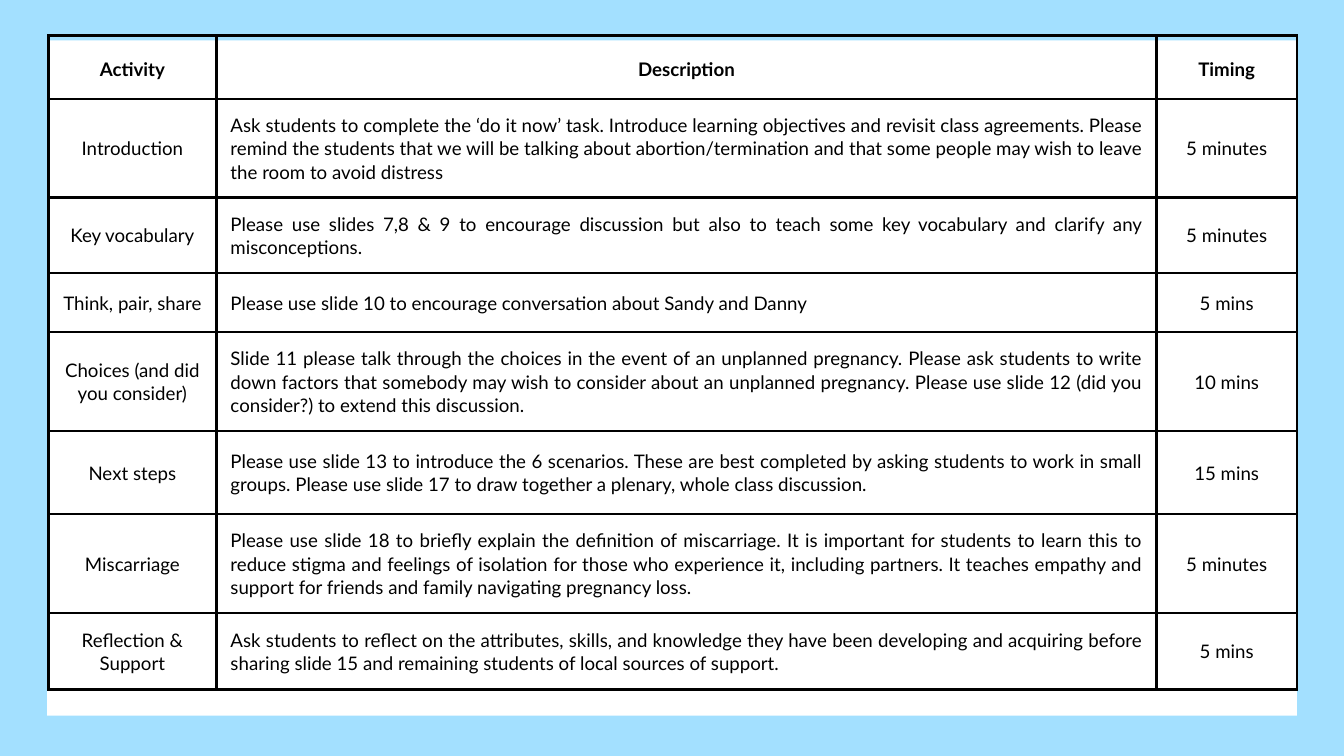
import pptx
import pptx.util
import pptx.dml.color
import pptx.enum.shapes
import pptx.enum.text
import pptx.oxml

Pt = pptx.util.Pt
RGB = pptx.dml.color.RGBColor.from_string
ALIGN = pptx.enum.text.PP_ALIGN

THEME = {
    "sky": RGB("A3E0FF"),
    "paper": RGB("FFFFFF"),
    "ink": "000000",
    "font": "Lato",
    "size": Pt(20),
    "header_spacing": Pt(28),
    "body_spacing": Pt(25.2),
    "border": Pt(3),
}

plan = [
    ("Activity", "Description", "Timing"),
    ("Introduction",
     "Ask students to complete the ‘do it now’ task. Introduce learning objectives and revisit class "
     "agreements. Please remind the students that we will be talking about abortion/termination and "
     "that some people may wish to leave the room to avoid distress",
     "5 minutes"),
    ("Key vocabulary",
     "Please use slides 7,8 & 9 to encourage discussion but also to teach some key vocabulary and "
     "clarify any misconceptions.",
     "5 minutes"),
    ("Think, pair, share",
     "Please use slide 10 to encourage conversation about Sandy and Danny",
     "5 mins"),
    ("Choices (and did you consider)",
     "Slide 11 please talk through the choices in the event of an unplanned pregnancy. Please ask "
     "students to write down factors that somebody may wish to consider about an unplanned pregnancy. "
     "Please use slide 12 (did you consider?) to extend this discussion.",
     "10 mins"),
    ("Next steps",
     "Please use slide 13 to introduce the 6 scenarios. These are best completed by asking students to "
     "work in small groups. Please use slide 17 to draw together a plenary, whole class discussion.",
     "15 mins"),
    ("Miscarriage",
     "Please use slide 18 to briefly explain the definition of miscarriage. It is important for "
     "students to learn this to reduce stigma and feelings of isolation for those who experience it, "
     "including partners. It teaches empathy and support for friends and family navigating pregnancy "
     "loss.",
     "5 minutes"),
    ("Reflection & Support",
     "Ask students to reflect on the attributes, skills, and knowledge they have been developing and "
     "acquiring before sharing slide 15 and remaining students of local sources of support.",
     "5 mins"),
]
column_spans = [25, 139.9, 20.9]
row_spans = [9.4, 8.8, 8.8, 8.8, 11.4, 12.4, 12.4, 11.4]

deck = pptx.Presentation()
deck.slide_width = pptx.util.Inches(20)
deck.slide_height = pptx.util.Inches(11.25)
column = deck.slide_width / 200
row = deck.slide_height / 112.5


def grid(left, top, width, height):
    return [int(left * column), int(top * row), int(width * column), int(height * row)]


def add_borders(cell):
    properties = cell._tc.get_or_add_tcPr()
    for place, side in enumerate(("lnL", "lnR", "lnT", "lnB")):
        properties.insert(place, pptx.oxml.parse_xml(
            f'<a:{side} xmlns:a="http://schemas.openxmlformats.org/drawingml/2006/main" '
            f'w="{THEME["border"]}"><a:solidFill><a:srgbClr val="{THEME["ink"]}"/></a:solidFill>'
            f'<a:prstDash val="solid"/></a:{side}>'))


slide = deck.slides.add_slide(deck.slide_layouts[6])
slide.background.fill.solid()
slide.background.fill.fore_color.rgb = THEME["sky"]

panel = slide.shapes.add_shape(pptx.enum.shapes.MSO_SHAPE.RECTANGLE, *grid(7, 6, 186, 100.5))
panel.shadow.inherit = False
panel.fill.solid()
panel.fill.fore_color.rgb = THEME["paper"]
panel.line.fill.background()

schedule_place = grid(7.2, 5.3, 185.8, 96.2)
schedule_frame = slide.shapes.add_table(len(plan), len(column_spans), *schedule_place)
schedule = schedule_frame.table
schedule.horz_banding = False
for schedule_column, span in zip(schedule.columns, column_spans):
    schedule_column.width = int(span * column)
for schedule_row, span in zip(schedule.rows, row_spans):
    schedule_row.height = int(span * row)
schedule_frame.height = schedule_place[3]

inset = int(2.1 * column)
cell_format = {
    "margin_left": inset,
    "margin_right": inset,
    "margin_top": inset,
    "margin_bottom": inset,
    "vertical_anchor": pptx.enum.text.MSO_ANCHOR.MIDDLE,
}

for row_index, activity in enumerate(plan):
    is_header = row_index == 0
    for column_index, wording in enumerate(activity):
        cell = schedule.cell(row_index, column_index)
        cell.text = wording
        for name, value in cell_format.items():
            setattr(cell, name, value)
        cell.fill.background()
        add_borders(cell)

        paragraph = cell.text_frame.paragraphs[0]
        is_description = column_index == 1 and not is_header
        paragraph.alignment = ALIGN.JUSTIFY if is_description else ALIGN.CENTER
        paragraph.line_spacing = THEME["header_spacing" if is_header else "body_spacing"]

        font = paragraph.runs[0].font
        font_format = {"name": THEME["font"], "size": THEME["size"], "bold": is_header}
        for name, value in font_format.items():
            setattr(font, name, value)
        font.color.rgb = RGB(THEME["ink"])

deck.save("out.pptx")
